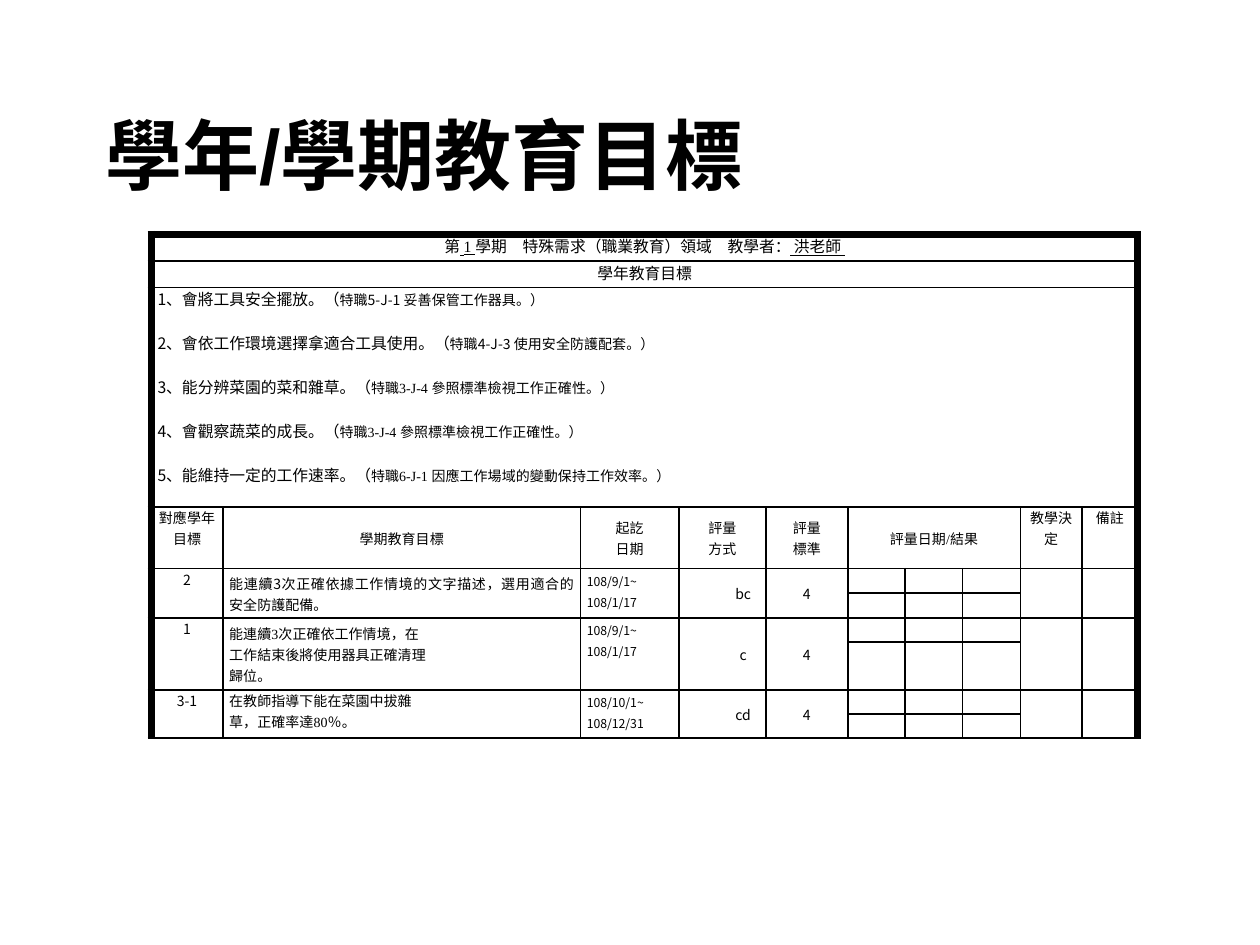
from dataclasses import dataclass
from typing import NamedTuple, Optional

from lxml import etree
from pptx import Presentation
from pptx import util as u
from pptx.dml.color import RGBColor
from pptx.enum import text as t
from pptx.oxml.ns import qn

BLACK = RGBColor(0, 0, 0)
SERIF = "Times New Roman"
SANS = "Noto Sans CJK SC"
CHINESE = "Noto Sans CJK TC"
CENTER, JUSTIFY = t.PP_ALIGN.CENTER, t.PP_ALIGN.JUSTIFY
LEFT = t.PP_ALIGN.LEFT
TOP, MIDDLE = t.MSO_ANCHOR.TOP, t.MSO_ANCHOR.MIDDLE

COLUMN_WIDTHS = [41, 204.4, 56.2, 49.7, 46.8, 32.6, 33, 33, 35.2, 32]
ROW_HEIGHTS = [15.2, 15.2, 125.3, 35.4, 13.8, 14.4, 13.8, 27.4, 13.8, 13.8]
THIN, THICK = 1, 4.5
FIRST_RESULT, LAST_RESULT = 5, 7


class Piece(NamedTuple):
    text: str
    font: Optional[str] = None
    size: Optional[float] = None
    underline: bool = False


@dataclass
class Entry:
    """Text of one table cell, a list of pieces for each paragraph."""
    row: int
    column: int
    lines: list[list[Piece]]
    font: str = SANS
    size: float = 8
    align: t.PP_ALIGN = CENTER
    anchor: t.MSO_ANCHOR = MIDDLE
    left_indent: float = 0
    line_spacing: Optional[float] = 12
    gap: float = 0


class Goal(NamedTuple):
    text: str
    code: str
    font: str


class Plan(NamedTuple):
    number: str
    goal: list[str]
    goal_font: str
    goal_anchor: t.MSO_ANCHOR
    dates: list[str]
    method: str


def plain(*lines: str) -> list[list[Piece]]:
    return [[Piece(line)] for line in lines]


def set_typeface(font, name: str) -> None:
    """Set the Latin typeface and the Chinese one that goes with it."""
    font.name = name
    etree.SubElement(font._element, qn("a:ea"), typeface=CHINESE)


def write_paragraph(paragraph, pieces: list[Piece], font: str, size: float,
                    align: t.PP_ALIGN, bold: bool = False) -> None:
    paragraph.alignment = align
    paragraph.font.size = u.Pt(size)
    paragraph.font.bold = bold
    paragraph.font.color.rgb = BLACK
    set_typeface(paragraph.font, font)
    for piece in pieces:
        run = paragraph.add_run()
        run.text = piece.text
        if piece.font:
            set_typeface(run.font, piece.font)
        if piece.size:
            run.font.size = u.Pt(piece.size)
        if piece.underline:
            run.font.underline = True


def write_entry(table, entry: Entry) -> None:
    cell = table.cell(entry.row, entry.column)
    cell.vertical_anchor = entry.anchor
    for index, pieces in enumerate(entry.lines):
        frame = cell.text_frame
        paragraph = frame.add_paragraph() if index else frame.paragraphs[0]
        if entry.line_spacing:
            paragraph.line_spacing = u.Pt(entry.line_spacing)
        if entry.gap:
            paragraph.space_after = u.Pt(entry.gap)
            paragraph.space_before = u.Pt(entry.gap if index else 0)
        if entry.left_indent:
            paragraph._p.get_or_add_pPr().set("marL", str(u.Pt(entry.left_indent)))
        write_paragraph(paragraph, pieces, entry.font, entry.size, entry.align)


def set_border(cell, position: int, side: str, width: float) -> None:
    line = etree.Element(qn(f"a:ln{side}"), w=str(u.Pt(width)))
    fill = etree.SubElement(line, qn("a:solidFill"))
    etree.SubElement(fill, qn("a:srgbClr"), val=str(BLACK))
    cell._tc.get_or_add_tcPr().insert(position, line)


def format_cell(table, row: int, column: int) -> None:
    cell = table.cell(row, column)
    cell.margin_left = cell.margin_right = u.Pt(3.6)
    cell.margin_top = cell.margin_bottom = 0
    cell.fill.background()
    at_right = column + cell.span_width == len(COLUMN_WIDTHS)
    widths = {
        "L": THICK if column == 0 else THIN,
        "R": THICK if at_right else THIN,
        "T": THICK if row == 0 else THIN,
        "B": THIN,
    }
    for position, (side, width) in enumerate(widths.items()):
        set_border(cell, position, side, width)
    if not cell.text_frame.text:
        paragraph = cell.text_frame.paragraphs[0]
        etree.SubElement(paragraph._p, qn("a:endParaRPr"), sz="800")


GOALS = [
    Goal("會將工具安全擺放。", "特職5-J-1 妥善保管工作器具。）", CHINESE),
    Goal("會依工作環境選擇拿適合工具使用。", "特職4-J-3 使用安全防護配套。）", CHINESE),
    Goal("能分辨菜園的菜和雜草。", "特職3-J-4 參照標準檢視工作正確性。）", SERIF),
    Goal("會觀察蔬菜的成長。", "特職3-J-4 參照標準檢視工作正確性。）", SERIF),
    Goal("能維持一定的工作速率。", "特職6-J-1 因應工作場域的變動保持工作效率。）", SERIF),
]
PLANS = [
    Plan("2", ["能連續3次正確依據工作情境的文字描述，選用適合的安全防護配備。"],
         SANS, MIDDLE, ["108/9/1~", "108/1/17"], "bc"),
    Plan("1", ["能連續3次正確依工作情境，在", "工作結束後將使用器具正確清理", "歸位。"],
         SERIF, MIDDLE, ["108/9/1~", "108/1/17"], "c"),
    Plan("3-1", ["在教師指導下能在菜園中拔雜", "草，正確率達80％。"],
         SERIF, TOP, ["108/10/1~", "108/12/31"], "cd"),
]
HEADINGS = [
    Entry(3, 0, plain("對應學年目標"), anchor=TOP),
    Entry(3, 1, plain("學期教育目標")),
    Entry(3, 2, plain("起訖", "日期")),
    Entry(3, 3, plain("評量", "方式")),
    Entry(3, 4, plain("評量", "標準")),
    Entry(3, FIRST_RESULT, plain("評量日期/結果"), font=SERIF),
    Entry(3, 8, plain("教學決定"), anchor=TOP),
    Entry(3, 9, plain("備註"), anchor=TOP),
]


def table_entries() -> list[Entry]:
    semester = [Piece("第"), Piece(" 1 ", underline=True),
                Piece("學期　特殊需求（職業教育）領域　教學者："),
                Piece(" 洪老師 ", underline=True)]
    goals = [[Piece(str(number), SANS), Piece(f"、{goal.text}（", goal.font),
              Piece(goal.code, goal.font, 8)]
             for number, goal in enumerate(GOALS, 1)]
    entries = [
        Entry(0, 0, [semester], SERIF, 9, anchor=TOP, line_spacing=None),
        Entry(1, 0, plain("學年教育目標"), SERIF, 9, anchor=TOP, line_spacing=None),
        Entry(2, 0, goals, SERIF, 9, LEFT, TOP, line_spacing=None, gap=6),
        *HEADINGS,
    ]
    for index, plan in enumerate(PLANS):
        row = 4 + 2 * index
        entries += [
            Entry(row, 0, plain(plan.number), anchor=TOP),
            Entry(row, 1, plain(*plan.goal), plan.goal_font, 8, JUSTIFY, plan.goal_anchor),
            Entry(row, 2, plain(*plan.dates), SANS, 7, JUSTIFY, TOP),
            Entry(row, 3, plain(plan.method), left_indent=23.8),
            Entry(row, 4, plain("4")),
        ]
    return entries


def add_title(slide) -> None:
    box = slide.shapes.add_textbox(u.Pt(0), u.Pt(54.7), u.Pt(484.6), u.Pt(66.2))
    frame = box.text_frame
    frame.word_wrap = True
    frame.vertical_anchor = MIDDLE
    write_paragraph(frame.paragraphs[0], [Piece("學年/學期教育目標")],
                    "Arial", 44, CENTER, bold=True)


def add_goal_table(slide) -> None:
    rows, columns = len(ROW_HEIGHTS), len(COLUMN_WIDTHS)
    table = slide.shapes.add_table(rows, columns, u.Pt(86.4), u.Pt(133.9),
                                   u.Pt(sum(COLUMN_WIDTHS)), u.Pt(sum(ROW_HEIGHTS))).table
    table.first_row = table.horz_banding = False
    for column, width in zip(table.columns, COLUMN_WIDTHS):
        column.width = u.Pt(width)
    for row, height in zip(table.rows, ROW_HEIGHTS):
        row.height = u.Pt(height)

    # Full-width rows, result heading, and plans two rows high
    for row in range(3):
        table.cell(row, 0).merge(table.cell(row, columns - 1))
    table.cell(3, FIRST_RESULT).merge(table.cell(3, LAST_RESULT))
    for row in range(4, rows, 2):
        for column in range(columns):
            if not FIRST_RESULT <= column <= LAST_RESULT:
                table.cell(row, column).merge(table.cell(row + 1, column))

    for entry in table_entries():
        write_entry(table, entry)
    for row in range(rows):
        for column in range(columns):
            format_cell(table, row, column)


def main() -> None:
    presentation = Presentation()
    presentation.slide_width, presentation.slide_height = u.Pt(720), u.Pt(540)
    slide = presentation.slides.add_slide(presentation.slide_layouts[6])
    add_title(slide)
    add_goal_table(slide)
    presentation.save("out.pptx")


if __name__ == "__main__":
    main()
